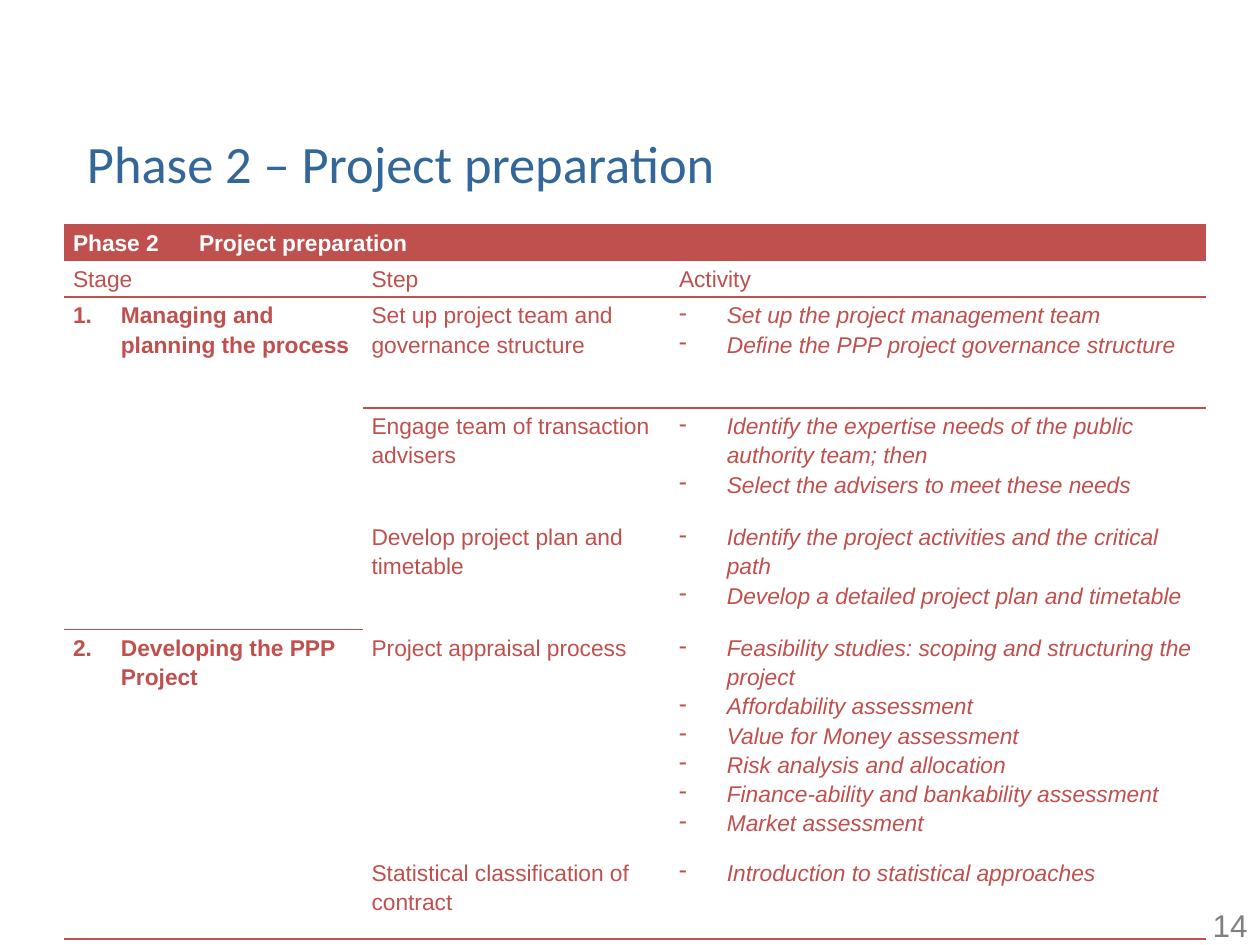
from lxml import etree
from pptx import Presentation
from pptx.dml.color import RGBColor
from pptx.enum.text import MSO_ANCHOR, MSO_AUTO_SIZE, PP_ALIGN
from pptx.oxml.ns import qn
from pptx.util import Inches, Pt

TOP = MSO_ANCHOR.TOP
NO_AUTOFIT = MSO_AUTO_SIZE.NONE
LEFT, RIGHT = PP_ALIGN.LEFT, PP_ALIGN.RIGHT

WHITE = RGBColor(0xFF, 0xFF, 0xFF)
RED = RGBColor(0xC0, 0x50, 0x4D)
BLUE = RGBColor(0x33, 0x66, 0x99)
GREY = RGBColor(0x80, 0x80, 0x80)

PLAIN_TABLE_STYLE = "{2D5ABB26-0587-4C30-8999-92F81FD0307C}"
COLUMN_WIDTHS = [2.37, 2.44, 4.25]
ROW_HEIGHTS = [0.25, 0.25, 0.88, 0.88, 0.88, 1.71, 0.67]
HEADINGS = ["Stage", "Step", "Activity"]
STAGES = [
    ("Managing and planning the process", [
        ("Set up project team and governance structure", [
            "Set up the project management team",
            "Define the PPP project governance structure",
        ]),
        ("Engage team of transaction advisers", [
            "Identify the expertise needs of the public authority team; then",
            "Select the advisers to meet these needs",
        ]),
        ("Develop project plan and timetable", [
            "Identify the project activities and the critical path",
            "Develop a detailed project plan and timetable",
        ]),
    ]),
    ("Developing the PPP Project", [
        ("Project appraisal process", [
            "Feasibility studies: scoping and structuring the project",
            "Affordability assessment",
            "Value for Money assessment",
            "Risk analysis and allocation",
            "Finance-ability and bankability assessment",
            "Market assessment",
        ]),
        ("Statistical classification of contract", [
            "Introduction to statistical approaches",
        ]),
    ]),
]


def set_attributes(target, values):
    for name, value in values.items():
        setattr(target, name, value)


def add_run(paragraph, text, size, color, font="Arial", bold=False, italic=False):
    run = paragraph.add_run()
    run.text = text
    set_attributes(run.font, {"name": font, "size": Pt(size),
                              "bold": bold, "italic": italic})
    run.font.color.rgb = color


def add_marker(paragraph, tag, **attributes):
    """Give the paragraph a hanging bullet or number."""
    properties = paragraph._p.get_or_add_pPr()
    properties.set("marL", str(Inches(0.38)))
    properties.set("indent", str(-Inches(0.38)))
    etree.SubElement(properties, qn(tag), attributes)


def add_border(cell, tag):
    properties = cell._tc.get_or_add_tcPr()
    line = etree.Element(qn(tag), w=str(Pt(1)))
    fill = etree.SubElement(line, qn("a:solidFill"))
    etree.SubElement(fill, qn("a:srgbClr"), val=str(RED))
    properties.insert(0, line)


def fill_cell(cell, texts, color=RED, fill=None, marker=None, **style):
    """Write one paragraph per text; marker is a tag and its attributes."""
    set_attributes(cell, {"margin_left": Inches(0.07), "margin_right": Inches(0.07),
                          "margin_top": Inches(0.02), "margin_bottom": Inches(0.02),
                          "vertical_anchor": TOP})
    if fill is None:
        cell.fill.background()
    else:
        cell.fill.solid()
        cell.fill.fore_color.rgb = fill
    frame = cell.text_frame
    for index, text in enumerate(texts):
        paragraph = frame.add_paragraph() if index else frame.paragraphs[0]
        paragraph.line_spacing = 1.15
        if marker:
            tag, attributes = marker
            add_marker(paragraph, tag, **attributes)
        add_run(paragraph, text, 13, color, **style)


def add_title(slide):
    title = slide.shapes.title
    set_attributes(title, {"left": Inches(0.59), "top": Inches(0.99),
                           "width": Inches(8.58), "height": Inches(0.79)})
    set_attributes(title.text_frame, {"vertical_anchor": TOP, "word_wrap": True,
                                      "auto_size": NO_AUTOFIT})
    paragraph = title.text_frame.paragraphs[0]
    paragraph.alignment = LEFT
    add_run(paragraph, "Phase 2 – Project preparation", 30, BLUE, "Calibri")


def add_page_number(slide):
    box = slide.shapes.add_textbox(Inches(7.67), Inches(7.14),
                                   Inches(2.33), Inches(0.36))
    box.text_frame.word_wrap = True
    paragraph = box.text_frame.paragraphs[0]
    paragraph.alignment = RIGHT
    add_run(paragraph, "14", 18, GREY)


def create_table(slide):
    table = slide.shapes.add_table(
        len(ROW_HEIGHTS), len(COLUMN_WIDTHS), Inches(0.51), Inches(1.78),
        Inches(sum(COLUMN_WIDTHS)), Inches(sum(ROW_HEIGHTS))).table
    set_attributes(table, {"first_row": False, "horz_banding": False})
    table._tbl.tblPr.find(qn("a:tableStyleId")).text = PLAIN_TABLE_STYLE
    for column, width in zip(table.columns, COLUMN_WIDTHS):
        column.width = Inches(width)
    for row, height in zip(table.rows, ROW_HEIGHTS):
        row.height = Inches(height)
    return table


def add_phase_table(slide):
    table = create_table(slide)
    table.cell(0, 0).merge(table.cell(0, 2))
    fill_cell(table.cell(0, 0), ["Phase 2\tProject preparation"],
              WHITE, RED, bold=True)
    for column, heading in enumerate(HEADINGS):
        fill_cell(table.cell(1, column), [heading], fill=WHITE)

    row = 2
    for number, (stage, steps) in enumerate(STAGES, 1):
        stage_cell = table.cell(row, 0)
        stage_cell.merge(table.cell(row + len(steps) - 1, 0))
        numbering = {"type": "arabicPeriod", "startAt": str(number)}
        fill_cell(stage_cell, [stage], marker=("a:buAutoNum", numbering), bold=True)
        for step, activities in steps:
            fill_cell(table.cell(row, 1), [step])
            fill_cell(table.cell(row, 2), activities,
                      marker=("a:buChar", {"char": "-"}), italic=True)
            row += 1

    for column in range(len(HEADINGS)):
        add_border(table.cell(1, column), "a:lnB")
        add_border(table.cell(2, column), "a:lnT")
        add_border(table.cell(row - 1, column), "a:lnB")
    add_border(stage_cell, "a:lnB")


def main():
    presentation = Presentation()
    set_attributes(presentation, {"slide_width": Inches(10),
                                  "slide_height": Inches(7.5)})
    title_only = presentation.slide_layouts[5]
    slide = presentation.slides.add_slide(title_only)
    add_page_number(slide)
    add_title(slide)
    add_phase_table(slide)
    presentation.save("out.pptx")


if __name__ == "__main__":
    main()
